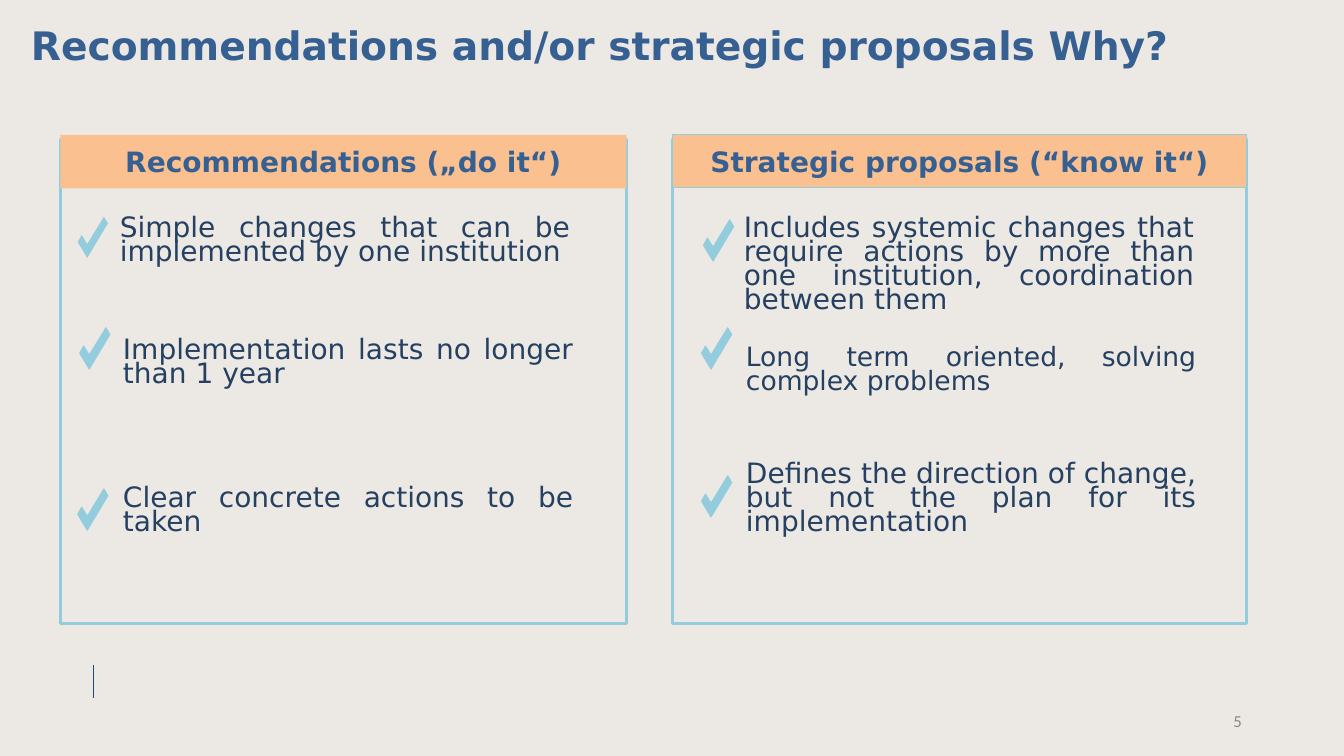
import pptx
import pptx.util
from pptx.dml.color import RGBColor
from pptx.enum.shapes import MSO_CONNECTOR, MSO_SHAPE
from pptx.enum.text import MSO_ANCHOR, MSO_AUTO_SIZE, PP_ALIGN
from pptx.oxml.ns import qn
import lxml.etree

Cm = pptx.util.Cm
Pt = pptx.util.Pt

BACKGROUND = RGBColor(0xEC, 0xE9, 0xE5)
HEADING = RGBColor(0x37, 0x60, 0x92)
BODY = RGBColor(0x25, 0x40, 0x61)
PEACH = RGBColor(0xFA, 0xC0, 0x90)
AQUA = RGBColor(0x93, 0xCD, 0xDD)
NAVY = RGBColor(0x1F, 0x49, 0x7D)
GREY = RGBColor(0x88, 0x88, 0x88)

CHECK = [(0.1, 0.46), (0.24, 0.69), (0.66, 0), (0.76, 0.17),
         (0.24, 1.04), (0.13, 0.86), (0, 0.64)]

PANELS = [
    {"header": "Recommendations („do it“)", "left": 1.52, "width": 14.27,
     "header_top": 3.4, "header_line": None,
     "items": [
         ("Simple changes that can be implemented by one institution",
          3.02, 5.51, 1.22, 20, 1.96, 5.46, None),
         ("Implementation lasts no longer than 1 year",
          3.1, 8.59, 1.22, 20, 2.01, 8.26, AQUA),
         ("Clear concrete actions to be taken",
          3.1, 12.32, 1.22, 20, 1.96, 12.32, AQUA)]},
    {"header": "Strategic proposals (“know it“)", "left": 16.94, "width": 14.48,
     "header_top": 3.38, "header_line": AQUA,
     "items": [
         ("Includes systemic changes that require actions by more than one "
          "institution, coordination between them",
          18.75, 5.51, 2.41, 20, 17.73, 5.54, AQUA),
         ("Long term oriented, solving complex problems",
          18.8, 8.76, 1.22, 19, 17.68, 8.26, AQUA),
         ("Defines the direction of change, but not the plan for its implementation",
          18.8, 11.71, 1.83, 20, 17.68, 11.99, AQUA)]},
]


class SlideBuilder:
    font = "DejaVu Sans"

    def __init__(self, prs):
        self.s = prs.slides.add_slide(prs.slide_layouts[6])
        fill = self.s.background.fill
        fill.solid()
        fill.fore_color.rgb = BACKGROUND

    def paint(self, sp, fill=None, line=None, weight=0.75):
        sp.shadow.inherit = False
        if fill is None:
            sp.fill.background()
        else:
            sp.fill.solid()
            sp.fill.fore_color.rgb = fill
        if line is None:
            sp.line.fill.background()
        else:
            sp.line.color.rgb = line
            sp.line.width = Pt(weight)

    def label(self, sp, text, size, color, align=PP_ALIGN.LEFT, bold=False,
              font=None, margins=(0.25, 0.13), anchor=MSO_ANCHOR.MIDDLE):
        tf = sp.text_frame
        tf.word_wrap = True
        tf.vertical_anchor = anchor
        tf.margin_left = tf.margin_right = Cm(margins[0])
        tf.margin_top = tf.margin_bottom = Cm(margins[1])
        p = tf.paragraphs[0]
        p.text = text
        p.alignment = align
        r = p.runs[0]
        r.font.name = font or self.font
        r.font.size = Pt(size)
        r.font.bold = bold
        r.font.color.rgb = color

    def rect(self, x, y, w, h, **style):
        sp = self.s.shapes.add_shape(MSO_SHAPE.RECTANGLE, Cm(x), Cm(y), Cm(w), Cm(h))
        self.paint(sp, **style)
        return sp

    def textbox(self, x, y, w, h, text, size, color, **style):
        sp = self.s.shapes.add_textbox(Cm(x), Cm(y), Cm(w), Cm(h))
        self.label(sp, text, size, color, **style)
        return sp

    def item(self, x, y, h, text, size):
        sp = self.textbox(x, y, 11.35, h, text, size, BODY, align=PP_ALIGN.JUSTIFY,
                          margins=(0, 0), anchor=MSO_ANCHOR.TOP)
        sp.text_frame.auto_size = MSO_AUTO_SIZE.SHAPE_TO_FIT_TEXT
        p = sp.text_frame.paragraphs[0]
        p.line_spacing = Pt(17.3)
        p.space_after = Pt(16)

    def check(self, x, y, line):
        points = [(Cm(x + dx), Cm(y + dy)) for dx, dy in CHECK]
        outline = self.s.shapes.build_freeform(*points[0])
        outline.add_line_segments(points[1:], close=True)
        self.paint(outline.convert_to_shape(), fill=AQUA, line=line)

    def rule(self, x1, y1, x2, y2):
        line = self.s.shapes.add_connector(
            MSO_CONNECTOR.STRAIGHT, Cm(x1), Cm(y1), Cm(x2), Cm(y2))
        line.line.color.rgb = NAVY
        line.line.width = Pt(0.75)
        lxml.etree.SubElement(line._element.spPr, qn("a:effectLst"))

    def panel(self, header, left, width, header_top, header_line, items):
        self.rect(left, 3.53, width, 12.19, line=AQUA, weight=2.25)
        sp = self.rect(left, header_top, width, 1.35, fill=PEACH, line=header_line)
        self.label(sp, header, 20, HEADING, align=PP_ALIGN.CENTER, bold=True,
                   margins=(0.33, 0.18))
        for text, x, y, h, size, check_x, check_y, check_line in items:
            self.item(x, y, h, text, size)
            self.check(check_x, check_y, check_line)


def main():
    prs = pptx.Presentation()
    prs.slide_width = Cm(33.87)
    prs.slide_height = Cm(19.05)
    slide = SlideBuilder(prs)
    slide.textbox(23.93, 17.65, 7.62, 1.02, "5", 12, GREY,
                  align=PP_ALIGN.RIGHT, font="Calibri")
    slide.rule(2.36, 16.76, 2.36, 17.6)
    slide.textbox(0.53, 0.43, 29.26, 1.42,
                  "Recommendations and/or strategic proposals Why?",
                  28, HEADING, bold=True)
    for panel in PANELS:
        slide.panel(**panel)
    prs.save("out.pptx")


if __name__ == "__main__":
    main()
